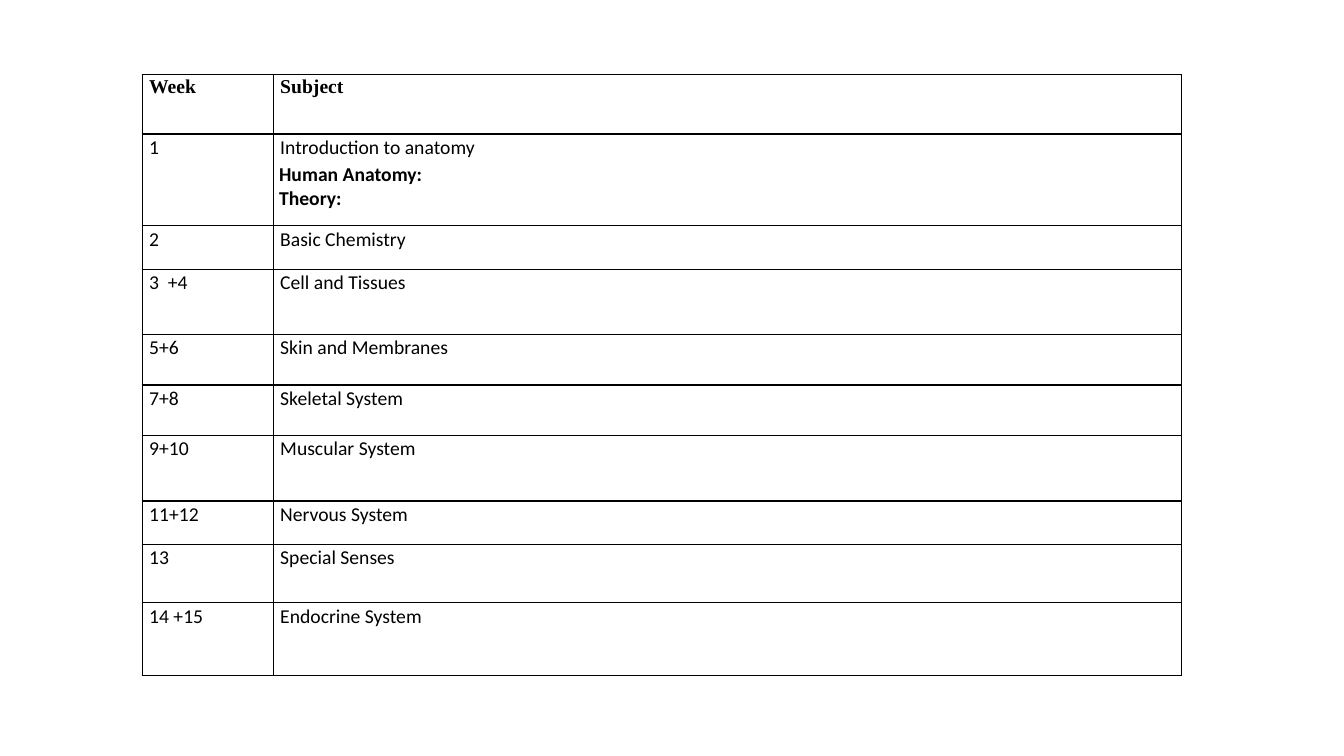
import pptx
import pptx.dml.color
import pptx.enum.text
import pptx.oxml
import pptx.oxml.ns
import pptx.util
from pptx.util import Inches

COLORS = {"ink": "000000", "paper": "FFFFFF"}
SCHEDULE = [
    ("Week", "Subject", 0.59),
    ("1", "Introduction to anatomy", 0.91),
    ("2", "Basic Chemistry", 0.43),
    ("3  +4", "Cell and Tissues", 0.65),
    ("5+6", "Skin and Membranes", 0.5),
    ("7+8", "Skeletal System", 0.5),
    ("9+10", "Muscular System", 0.65),
    ("11+12", "Nervous System", 0.43),
    ("13", "Special Senses", 0.58),
    ("14 +15", "Endocrine System", 0.72),
]
COLUMN_WIDTHS = [1.3, 9.01]


def add_text(paragraph, text, font_name, bold):
    run = paragraph.add_run()
    run.text = text
    run.font.name = font_name
    run.font.size = pptx.util.Pt(14)
    run.font.bold = bold
    run.font.color.rgb = pptx.dml.color.RGBColor.from_string(COLORS["ink"])


def add_borders(cell):
    """Draw a 1 pt line on all four sides of a table cell."""
    properties = cell._tc.get_or_add_tcPr()
    for position, side in enumerate(("lnL", "lnR", "lnT", "lnB")):
        line = pptx.oxml.parse_xml(
            f'<a:{side} {pptx.oxml.ns.nsdecls("a")} w="12700"><a:solidFill>'
            f'<a:srgbClr val="{COLORS["ink"]}"/></a:solidFill></a:{side}>'
        )
        properties.insert(position, line)


presentation = pptx.Presentation()
presentation.slide_width = Inches(13.33)
presentation.slide_height = Inches(7.5)
slide = presentation.slides.add_slide(presentation.slide_layouts[6])

# Weekly schedule
table_height = sum(height for _, _, height in SCHEDULE)
table = slide.shapes.add_table(
    len(SCHEDULE), len(COLUMN_WIDTHS), Inches(1.41), Inches(0.74),
    Inches(sum(COLUMN_WIDTHS)), Inches(table_height),
).table
for column, width in zip(table.columns, COLUMN_WIDTHS):
    column.width = Inches(width)

for row_index, (week, subject, height) in enumerate(SCHEDULE):
    is_header = row_index == 0
    table.rows[row_index].height = Inches(height)
    for column_index, text in enumerate((week, subject)):
        cell = table.cell(row_index, column_index)
        cell.fill.solid()
        cell.fill.fore_color.rgb = pptx.dml.color.RGBColor.from_string(COLORS["paper"])
        cell.margin_left = cell.margin_right = Inches(0.07)
        cell.margin_top = cell.margin_bottom = 0
        paragraph = cell.text_frame.paragraphs[0]
        paragraph.alignment = pptx.enum.text.PP_ALIGN.LEFT
        paragraph.line_spacing = 1.07
        add_text(paragraph, text, "Times New Roman" if is_header else "Calibri", is_header)
        add_borders(cell)

# Headings inside the first week's row
headings = slide.shapes.add_textbox(Inches(2.67), Inches(1.56), Inches(9), Inches(0.58))
text_frame = headings.text_frame
text_frame.word_wrap = True
for index, text in enumerate(("Human Anatomy:", "Theory:")):
    paragraph = text_frame.add_paragraph() if index else text_frame.paragraphs[0]
    add_text(paragraph, text, "Calibri", True)

presentation.save("out.pptx")
